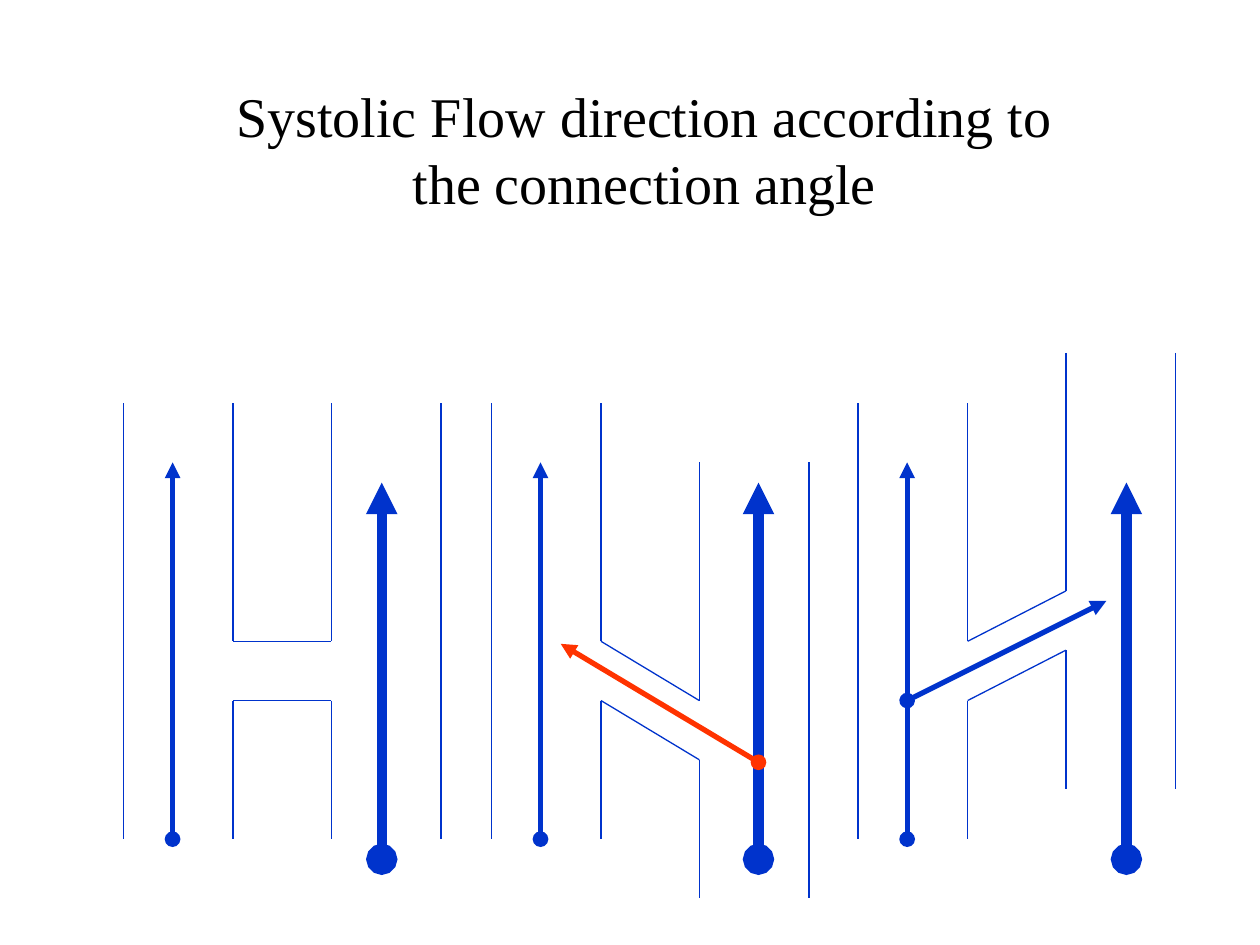
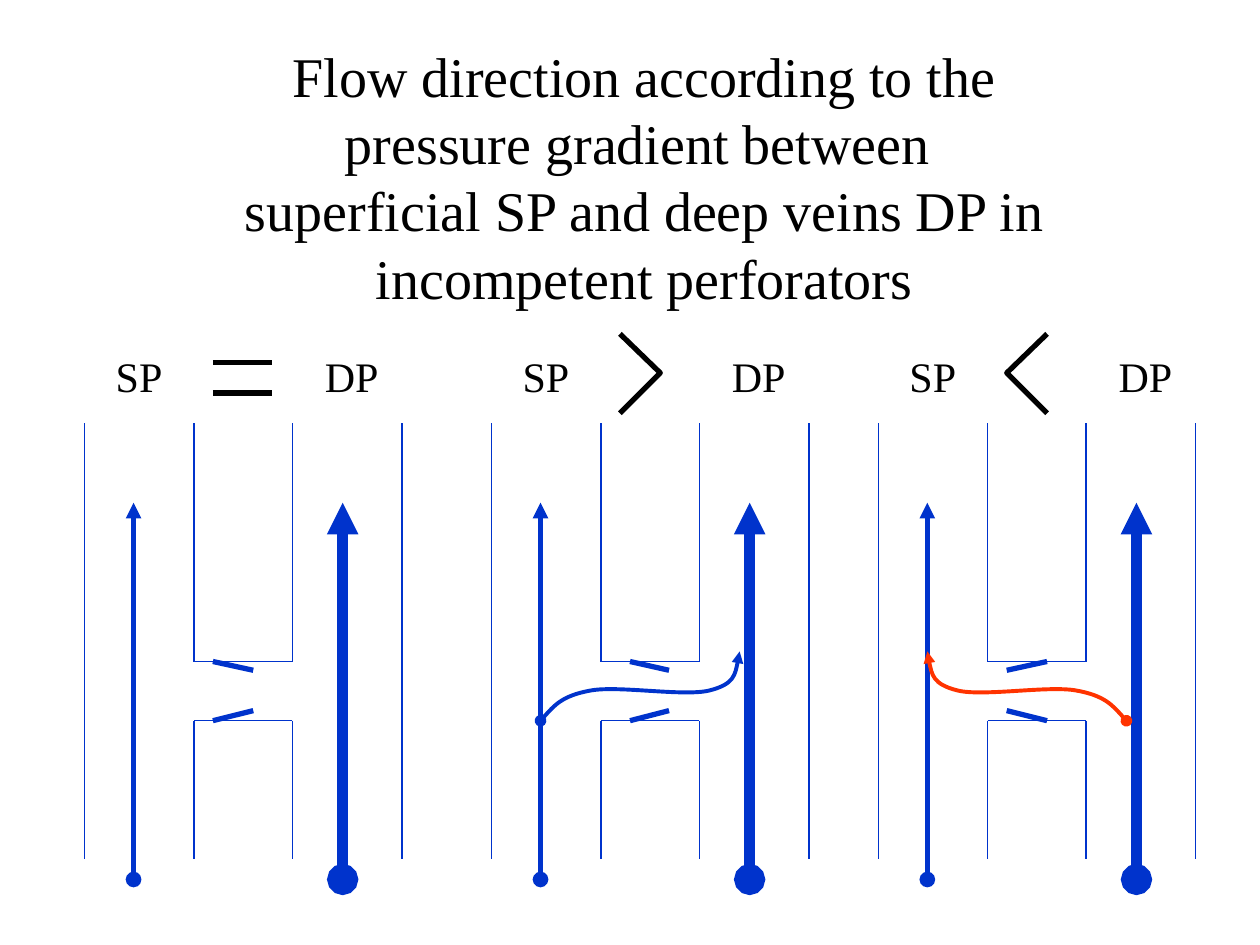
from dataclasses import dataclass

from lxml import etree
from pptx import Presentation
from pptx import util as u
from pptx.dml.color import RGBColor
from pptx.enum import shapes, text
from pptx.oxml.ns import qn


@dataclass(frozen=True)
class Theme:
    font: str = "Times New Roman"
    title_size: int = 32
    label_size: int = 24
    leading: float = 1.2
    ink: RGBColor = RGBColor(0x00, 0x00, 0x00)
    vein: RGBColor = RGBColor(0x00, 0x33, 0xCC)
    reflux: RGBColor = RGBColor(0xFF, 0x33, 0x00)
    wall_width: float = 0.75
    curve_width: float = 2.25
    bold_width: float = 3
    deep_width: float = 6


THEME = Theme()

# Vein geometry, in inches from the top left corner of a panel
INNER_SUPERFICIAL, INNER_DEEP, OUTER_DEEP = 0.87, 1.65, 2.52
PERFORATOR_TOP, PERFORATOR_BOTTOM, VEIN_LENGTH = 1.89, 2.36, 3.46
SUPERFICIAL_FLOW, DEEP_FLOW, FLOW_LENGTH = 0.39, 2.05, 2.99
SIGN_LEFT, SIGN_RIGHT = 1.02, 1.34
CURVE = [(0, 2.36), (0.09, 2.26), (0.17, 2.16), (0.4, 2.12), (0.62, 2.08),
         (1.14, 2.17), (1.34, 2.12), (1.54, 2.07), (1.56, 1.94), (1.58, 1.81)]


def style_line(shape, color, width, arrow=False):
    shape.line.color.rgb = color
    shape.line.width = u.Pt(width)
    if arrow:
        line = shape.line._get_or_add_ln()
        etree.SubElement(line, qn("a:headEnd"), type="oval")
        etree.SubElement(line, qn("a:tailEnd"), type="triangle")


def add_line(slide, start, end, color=THEME.vein, width=THEME.bold_width, arrow=False):
    ends = [u.Inches(value) for value in (*start, *end)]
    connector = slide.shapes.add_connector(shapes.MSO_CONNECTOR.STRAIGHT, *ends)
    style_line(connector, color, width, arrow)
    etree.SubElement(connector.element.spPr, qn("a:effectLst"))


def add_outline(slide, points, color, width, arrow=False):
    first, *others = [(u.Inches(x), u.Inches(y)) for x, y in points]
    builder = slide.shapes.build_freeform(*first)
    builder.add_line_segments(others, close=False)
    shape = builder.convert_to_shape()
    shape.fill.background()
    shape.shadow.inherit = False
    style_line(shape, color, width, arrow)
    return shape


def bend(shape):
    """Turn every three straight segments into one Bezier segment."""
    segments = shape.element.xpath(".//a:lnTo")
    for index in range(0, len(segments), 3):
        curve = etree.Element(qn("a:cubicBezTo"))
        segments[index].addprevious(curve)
        for segment in segments[index:index + 3]:
            curve.append(segment[0])
            segment.getparent().remove(segment)


def add_text(slide, box, lines, size, align):
    """Write the lines as one paragraph, with a line break between them."""
    frame = slide.shapes.add_textbox(*map(u.Inches, box)).text_frame
    frame.word_wrap = True
    frame.auto_size = text.MSO_AUTO_SIZE.SHAPE_TO_FIT_TEXT
    paragraph = frame.paragraphs[0]
    paragraph.alignment = align
    paragraph.line_spacing = u.Pt(size * THEME.leading)
    for number, line in enumerate(lines):
        if number:
            paragraph.add_line_break()
        run = paragraph.add_run()
        run.text = line
        run.font.name = THEME.font
        run.font.size = u.Pt(size)
        run.font.color.rgb = THEME.ink


def add_title(slide, top, height, *lines):
    add_text(slide, (1.69, top, 6.85, height), lines, THEME.title_size, text.PP_ALIGN.CENTER)


def draw_walls(slide, left, top, shift=0):
    """Draw both veins and their perforator; shift lowers the deep vein."""
    def wall(x1, y1, x2, y2):
        add_line(slide, (left + x1, top + y1), (left + x2, top + y2), width=THEME.wall_width)

    for outer, inner, drop in ((0, INNER_SUPERFICIAL, 0), (OUTER_DEEP, INNER_DEEP, shift)):
        wall(outer, drop, outer, VEIN_LENGTH + drop)
        wall(inner, PERFORATOR_BOTTOM + drop, inner, VEIN_LENGTH + drop)
        wall(inner, drop, inner, PERFORATOR_TOP + drop)
    for edge in (PERFORATOR_TOP, PERFORATOR_BOTTOM):
        wall(INNER_SUPERFICIAL, edge, INNER_DEEP, edge + shift)


def draw_flow(slide, x, top, width):
    add_line(slide, (x, top + FLOW_LENGTH), (x, top), width=width, arrow=True)


def draw_valve(slide, left, top, hinge, tip):
    for hinge_y, tip_y in ((PERFORATOR_TOP, 1.96), (PERFORATOR_BOTTOM, 2.28)):
        add_line(slide, (left + hinge, top + hinge_y), (left + tip, top + tip_y))


def draw_comparison(slide, left, top, sign):
    """Write SP and DP above the veins, with the drawn sign between them."""
    for offset, label in ((0.15, "SP"), (1.81, "DP")):
        add_text(slide, (left + offset, top - 0.63, 0.63, 0.5), [label],
                 THEME.label_size, text.PP_ALIGN.LEFT)
    if sign == "=":
        for rise in (0.48, 0.24):
            add_line(slide, (left + SIGN_LEFT, top - rise), (left + 1.49, top - rise), THEME.ink)
        return
    open_x, tip_x = (SIGN_LEFT, SIGN_RIGHT) if sign == ">" else (SIGN_RIGHT, SIGN_LEFT)
    points = [(left + x, top - rise) for x, rise in ((open_x, 0.71), (tip_x, 0.4), (open_x, 0.08))]
    add_outline(slide, points, THEME.ink, THEME.bold_width)


def draw_cross_flow(slide, left, top, start, direction, color):
    points = [(left + start + direction * x, top + y) for x, y in CURVE]
    bend(add_outline(slide, points, color, THEME.curve_width, arrow=True))


def build_angle_slide(slide):
    top = 3.2
    panels = [  # left, shift of the deep vein, deep flow, cross flow (start, end, colour)
        (0.98, 0, DEEP_FLOW, None),
        (3.9, 0.47, 2.12, ((2.12, 2.85), (0.55, 1.91), THEME.reflux)),
        (6.81, -0.4, 2.13, ((0.39, 2.36), (1.97, 1.57), THEME.vein)),
    ]
    add_title(slide, 0.6, 1.17, "Systolic Flow direction according to the connection angle")
    for left, shift, deep_flow, cross_flow in panels:
        draw_walls(slide, left, top, shift)
        draw_flow(slide, left + deep_flow, top + 0.63, THEME.deep_width)
        draw_flow(slide, left + SUPERFICIAL_FLOW, top + 0.47, THEME.bold_width)
        if cross_flow:
            start, end, color = cross_flow
            add_line(slide, (left + start[0], top + start[1]),
                     (left + end[0], top + end[1]), color, arrow=True)


def build_gradient_slide(slide):
    top = 3.36
    panels = [  # left, sign, valve (hinge, tip), cross flow (start, direction, colour)
        (0.67, "=", (1.02, 1.34), None),
        (3.9, ">", (1.1, 1.41), (SUPERFICIAL_FLOW, 1, THEME.vein)),
        (6.97, "<", (1.34, 1.02), (1.97, -1, THEME.reflux)),
    ]
    add_title(slide, 0.28, 2.23, "Flow direction according to the pressure gradient between ",
              "superficial SP and deep veins DP in incompetent perforators")
    for left, sign, valve, cross_flow in panels:
        draw_walls(slide, left, top)
        draw_comparison(slide, left, top, sign)
        for x, width in ((DEEP_FLOW, THEME.deep_width), (SUPERFICIAL_FLOW, THEME.bold_width)):
            draw_flow(slide, left + x, top + 0.63, width)
        draw_valve(slide, left, top, *valve)
        if cross_flow:
            draw_cross_flow(slide, left, top, *cross_flow)


def main():
    presentation = Presentation()
    presentation.slide_width = u.Inches(10)
    presentation.slide_height = u.Inches(7.5)
    for build in (build_angle_slide, build_gradient_slide):
        build(presentation.slides.add_slide(presentation.slide_layouts[6]))
    presentation.save("out.pptx")


if __name__ == "__main__":
    main()
